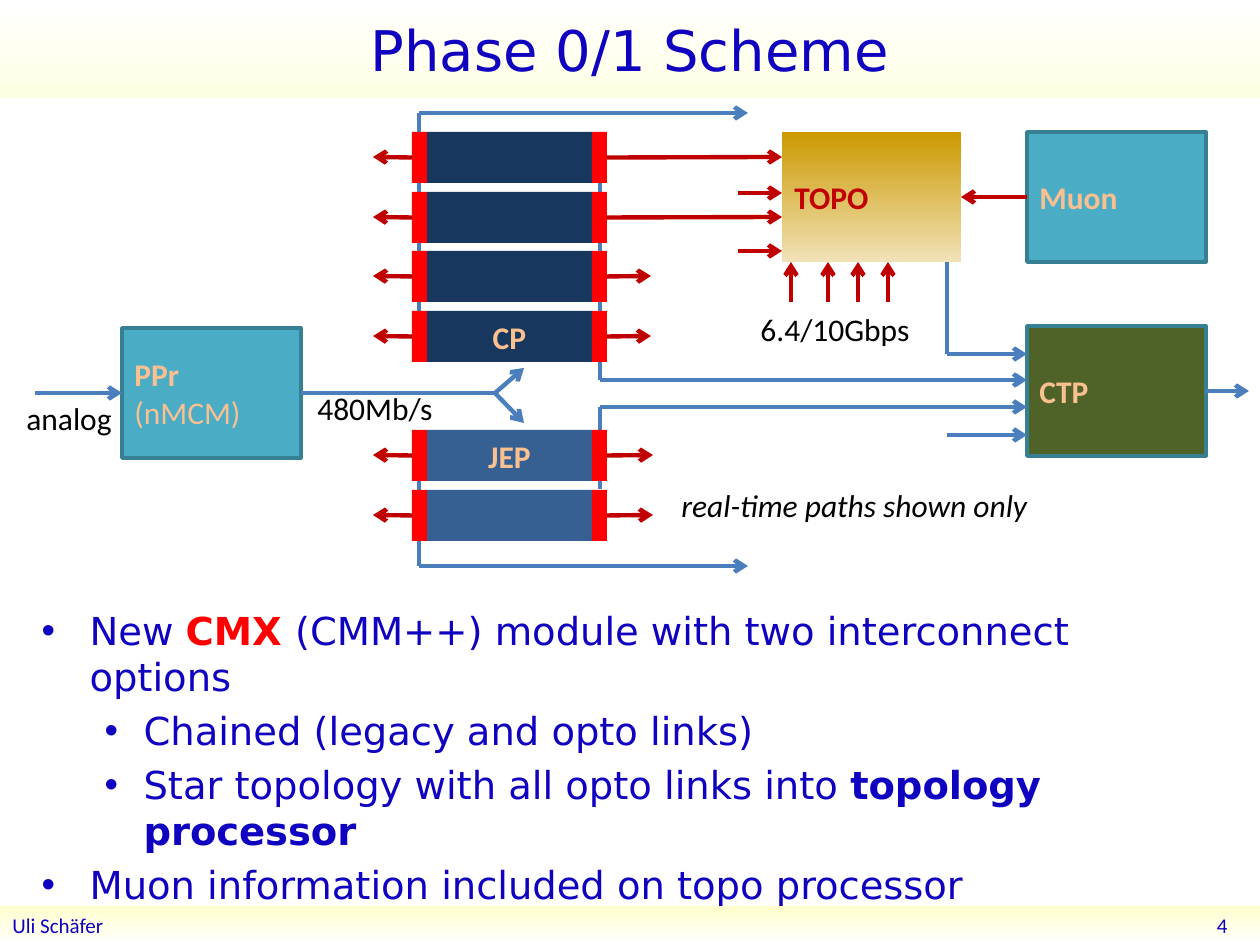
from lxml import etree
from pptx import Presentation
from pptx import util as u
from pptx.dml.color import RGBColor
from pptx.enum import shapes, text
from pptx.oxml.ns import qn


class Theme:
    sans, head = "Calibri", "DejaVu Sans"
    title, body, label, foot = 32, 22, 18, 12
    ink, blue, dark, red, peach = "0F01BF", "4B7EBC", "000000", "C00000", "FAC090"
    teal, edge, olive, hot = "4BACC6", "377F92", "4F6228", "FF0000"
    navy, steel = "17375E", "376092"
    band, base, gold = ("FFFFFF", "FFFFE4"), ("FFFFCC", "FFFFFF"), ("CC9900", "F1E2B8")


T = Theme
rgb = RGBColor.from_string
LEFT, MID, RIGHT = text.PP_ALIGN.LEFT, text.PP_ALIGN.CENTER, text.PP_ALIGN.RIGHT
EMU = 914400 / 126


def box(to, x, y, w, h, fill=None, words="", ink=T.dark, size=T.label,
        bold=False, align=LEFT, edge=None, wrap=True):
    spot = [round(n * EMU) for n in (x, y, w, h)]
    if fill:
        item = to.add_shape(shapes.MSO_SHAPE.RECTANGLE, *spot)
        item.shadow.inherit = False
        if isinstance(fill, tuple):
            item.fill.gradient()
            item.fill.gradient_angle = 270
            for stop, tone in zip(item.fill.gradient_stops, fill):
                stop.color.rgb = rgb(tone)
        else:
            item.fill.solid()
            item.fill.fore_color.rgb = rgb(fill)
        if edge:
            item.line.color.rgb = rgb(edge)
            item.line.width = u.Pt(2)
        else:
            item.line.fill.background()
    else:
        item = to.add_textbox(*spot)
    if words:
        frame = item.text_frame
        frame.word_wrap = wrap
        frame.vertical_anchor = text.MSO_ANCHOR.MIDDLE
        para = frame.paragraphs[0]
        para.add_run().text = words
        para.alignment = align
        para.font.name, para.font.size, para.font.bold = T.sans, u.Pt(size), bold
        para.font.color.rgb = rgb(ink)
    return item


def link(x1, y1, x2, y2, tone=T.blue, arrow=True):
    wire = art.add_connector(shapes.MSO_CONNECTOR.STRAIGHT,
                             *[round(n * EMU) for n in (x1, y1, x2, y2)])
    wire.line.color.rgb = rgb(tone)
    wire.line.width = u.Pt(2.5)
    props = wire._element.spPr
    if arrow:
        etree.SubElement(props.find(qn("a:ln")), qn("a:tailEnd"), type="arrow")
    etree.SubElement(props, qn("a:effectLst"))
    return wire


deck = Presentation()
deck.slide_width, deck.slide_height = round(1260 * EMU), round(945 * EMU)
slide = deck.slides.add_slide(deck.slide_layouts[1])
art = slide.shapes

title, body = art.title, slide.placeholders[1]
for item, spot in ((title, (0, 0, 1260, 98)), (body, (29, 601, 1201, 295))):
    item.left, item.top, item.width, item.height = [round(n * EMU) for n in spot]
    item.text_frame.auto_size = text.MSO_AUTO_SIZE.NONE
title.fill.gradient()
title.fill.gradient_angle = 270
for stop, tone in zip(title.fill.gradient_stops, T.band):
    stop.color.rgb = rgb(tone)
title.text_frame.text = "Phase 0/1 Scheme"
title.text_frame.vertical_anchor = text.MSO_ANCHOR.MIDDLE
para = title.text_frame.paragraphs[0]
para.alignment = MID
para.font.name, para.font.size = T.head, u.Pt(T.title)
para.font.color.rgb = rgb(T.ink)

points = [
    (0, [("New ", T.ink, False), ("CMX ", T.hot, True),
         ("(CMM++) module with two interconnect options", T.ink, False)]),
    (1, [("Chained (legacy and opto links)", T.ink, False)]),
    (1, [("Star topology with all opto links into ", T.ink, False),
         ("topology processor", T.ink, True)]),
    (0, [("Muon information included on topo processor", T.ink, False)]),
]
frame = body.text_frame
frame.vertical_anchor = text.MSO_ANCHOR.TOP
for n, (level, runs) in enumerate(points):
    para = frame.add_paragraph() if n else frame.paragraphs[0]
    para.level = level
    para.space_before = u.Pt(4.4)
    props = para._p.get_or_add_pPr()
    margin, hang = ((48, 48), (102, 39))[level]
    props.set("marL", str(round(margin * EMU)))
    props.set("indent", str(-round(hang * EMU)))
    etree.SubElement(props, qn("a:buChar"), char="•")
    para.font.name, para.font.size = T.head, u.Pt(T.body)
    for words, tone, bold in runs:
        run = para.add_run()
        run.text = words
        run.font.bold = bold
        run.font.color.rgb = rgb(tone)

box(art, 0, 906, 1260, 39, T.base, "Uli Schäfer", T.ink, T.foot)
box(art, 974, 905, 266, 40, None, "4", T.ink, T.foot, align=RIGHT)

for x, y1, y2 in ((419, 322, 113), (419, 566, 430), (600, 489, 407), (600, 380, 171)):
    link(x, y1, x, y2, arrow=False)

ppr = box(art, 122, 328, 179, 130, T.teal, "PPr ", T.peach, bold=True, edge=T.edge, wrap=False)
para = ppr.text_frame.paragraphs[0]
para.add_line_break()
run = para.add_run()
run.text = "(nMCM)"
run.font.bold = False
topo = box(art, 782, 132, 179, 130, T.gold, "TOPO", T.red, bold=True, wrap=False)
muon = box(art, 1027, 132, 179, 130, T.teal, "Muon", T.peach, bold=True, edge=T.edge, wrap=False)
ctp = box(art, 1027, 326, 179, 130, T.olive, "CTP", T.peach, bold=True, edge=T.edge, wrap=False)

crates = [(T.navy, [(0, "", 782), (1, "", 782), (2, "", 651), (3, "CP", 651)]),
          (T.steel, [(5, "JEP", 653), (6, "", 653)])]
for tone, rows in crates:
    crate = art.add_group_shape().shapes
    for row, name, end in rows:
        y = 132 + round(59.6 * row)
        box(crate, 427, y, 165, 51, tone, name, T.peach, bold=True, align=MID)
        west = box(crate, 412, y, 15, 51, T.hot)
        east = box(crate, 592, y, 15, 51, T.hot)
        link(412, y + 25, 373, y + 25, T.red).begin_connect(west, 1)
        link(607, y + 25, end, y + 25, T.red).begin_connect(east, 3)

link(35, 393, 122, 393).end_connect(ppr, 1)
link(301, 393, 495, 393, arrow=False).begin_connect(ppr, 3)
for y in (368, 423):
    link(495, 393, 524, y)
link(1206, 391, 1249, 391).begin_connect(ctp, 3)
feed = link(1027, 197, 961, 197, T.red)
feed.begin_connect(muon, 1)
feed.end_connect(topo, 3)

for y in (113, 566):
    link(419, y, 748, y)
link(947, 354, 947, 262, arrow=False)
for x, y in ((947, 354), (600, 380), (600, 407), (947, 435)):
    link(x, y, 1027, y)
for y in (193, 251):
    link(738, y, 782, y, T.red)
for x in (791, 828, 858, 888):
    link(x, 302, x, 262, T.red)

for x, y, w, words in ((14, 393, 129, "analog"), (305, 383, 150, "480Mb/s"),
                       (748, 304, 185, "6.4/10Gbps")):
    box(art, x, y, w, 50, None, words)
note = box(art, 669, 480, 397, 50, None, "real-time paths shown only")
note.text_frame.paragraphs[0].font.italic = True

deck.save("out.pptx")
